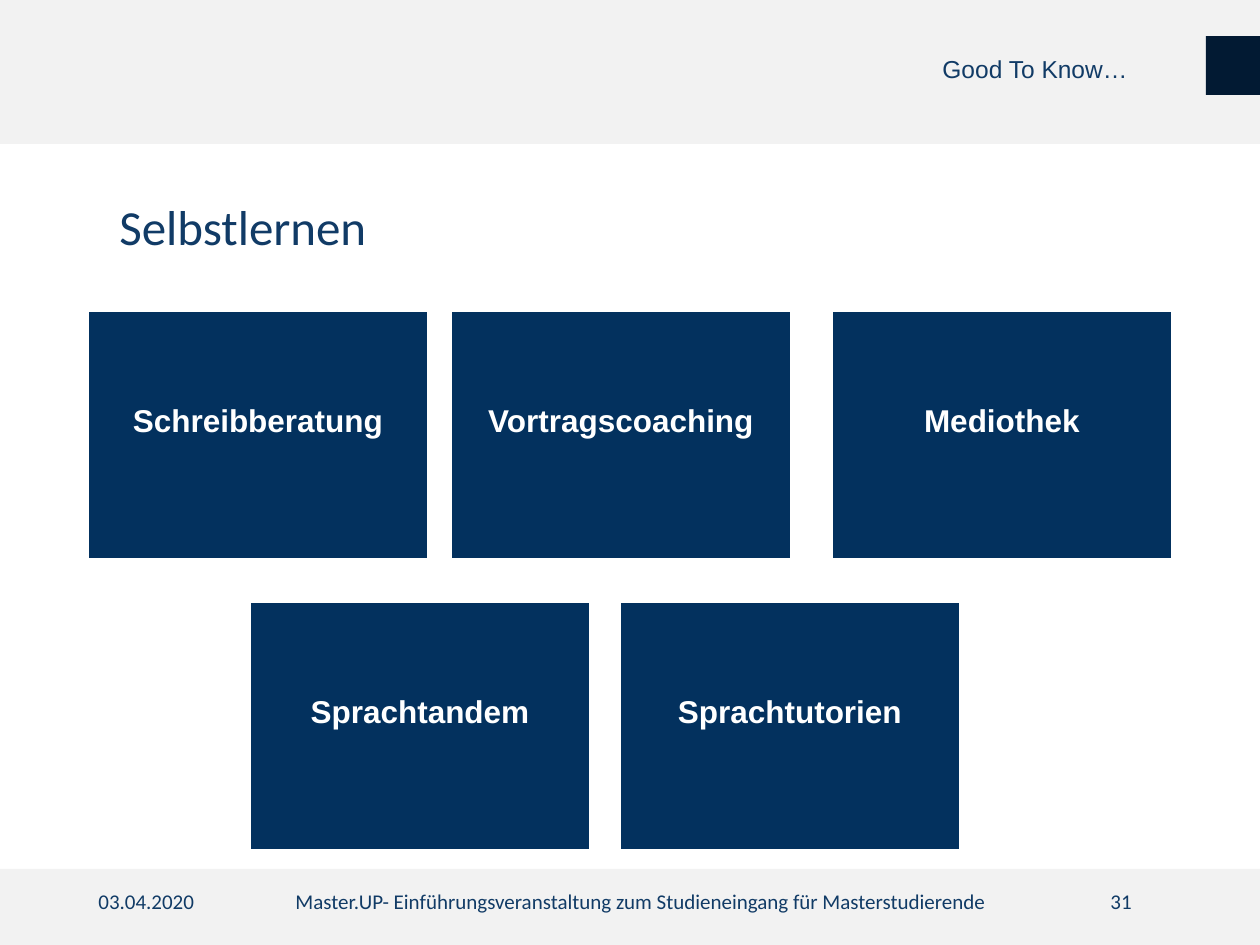
from dataclasses import dataclass

from pptx import Presentation
from pptx import util as u
from pptx.dml.color import RGBColor
from pptx.enum import shapes, text


@dataclass(frozen=True)
class Theme:
    """Colours, fonts and type sizes of the slide."""
    band: str = "F2F2F2"
    card: str = "03315E"
    mark: str = "021A33"
    ink: str = "113B66"
    white: str = "FFFFFF"
    sans: str = "Arial"
    body: str = "Calibri"
    title: int = 28
    label: int = 18
    head: int = 14
    foot: int = 12


THEME = Theme()
SCALE = 914400 / 126
CARD_W, CARD_H = 340, 248
ROWS = (
    (311, ((88, "Schreibberatung"), (451, "Vortragscoaching"), (832, "Mediothek"))),
    (602, ((250, "Sprachtandem"), (620, "Sprachtutorien"))),
)


def px(n):
    """Turn pixels into EMU."""
    return u.Emu(round(n * SCALE))


def write(shape, words, size, font=THEME.body, color=THEME.ink, bold=False,
          align=text.PP_ALIGN.LEFT, anchor=text.MSO_ANCHOR.TOP, lead=1.0):
    """Set the text of a shape and its format."""
    frame = shape.text_frame
    frame.word_wrap = True
    frame.vertical_anchor = anchor
    para = frame.paragraphs[0]
    para.alignment = align
    para.line_spacing = lead
    run = para.add_run()
    run.text = words
    run.font.size = u.Pt(size)
    run.font.name = font
    run.font.bold = bold
    run.font.color.rgb = RGBColor.from_string(color)


def block(slide, box, fill, line=None):
    """Add a plain rectangle."""
    shape = slide.shapes.add_shape(shapes.MSO_SHAPE.RECTANGLE, *map(px, box))
    shape.shadow.inherit = False
    shape.fill.solid()
    shape.fill.fore_color.rgb = RGBColor.from_string(fill)
    if line:
        shape.line.color.rgb = RGBColor.from_string(line)
        shape.line.width = u.Pt(1)
    else:
        shape.line.fill.background()
    return shape


def label(slide, box, words, size, **style):
    """Add a text box."""
    write(slide.shapes.add_textbox(*map(px, box)), words, size, **style)


def card(slide, left, top, words):
    """Add a card with its label a little above the middle."""
    shape = block(slide, (left, top, CARD_W, CARD_H), THEME.card, THEME.white)
    frame = shape.text_frame
    frame.margin_left = frame.margin_right = frame.margin_top = px(9)
    frame.margin_bottom = px(39)
    write(shape, words, THEME.label, font=THEME.sans, color=THEME.white, bold=True,
          align=text.PP_ALIGN.CENTER, anchor=text.MSO_ANCHOR.MIDDLE)


def footer(slide):
    """Add the date, the event name and the page number."""
    label(slide, (86, 882, 198, 50), "03.04.2020", THEME.foot)
    label(slide, (283, 882, 762, 50),
          "Master.UP- Einführungsveranstaltung zum Studieneingang für Masterstudierende",
          THEME.foot)
    label(slide, (861, 882, 283, 50), "31", THEME.foot, align=text.PP_ALIGN.RIGHT)


def main():
    """Build and save the slide."""
    deck = Presentation()
    deck.slide_width, deck.slide_height = px(1260), px(945)
    slide = deck.slides.add_slide(deck.slide_layouts[6])
    block(slide, (0, 869, 1260, 76), THEME.band)
    block(slide, (0, 0, 1260, 144), THEME.band)
    footer(slide)
    for top, cards in ROWS:
        for left, words in cards:
            card(slide, left, top, words)
    middle = text.MSO_ANCHOR.MIDDLE
    label(slide, (930, 24, 302, 93), "Good To Know…", THEME.head,
          font=THEME.sans, anchor=middle, lead=0.9)
    block(slide, (1206, 36, 54, 59), THEME.mark)
    label(slide, (107, 179, 1086, 102), "Selbstlernen", THEME.title,
          anchor=middle, lead=0.9)
    deck.save("out.pptx")


if __name__ == "__main__":
    main()
